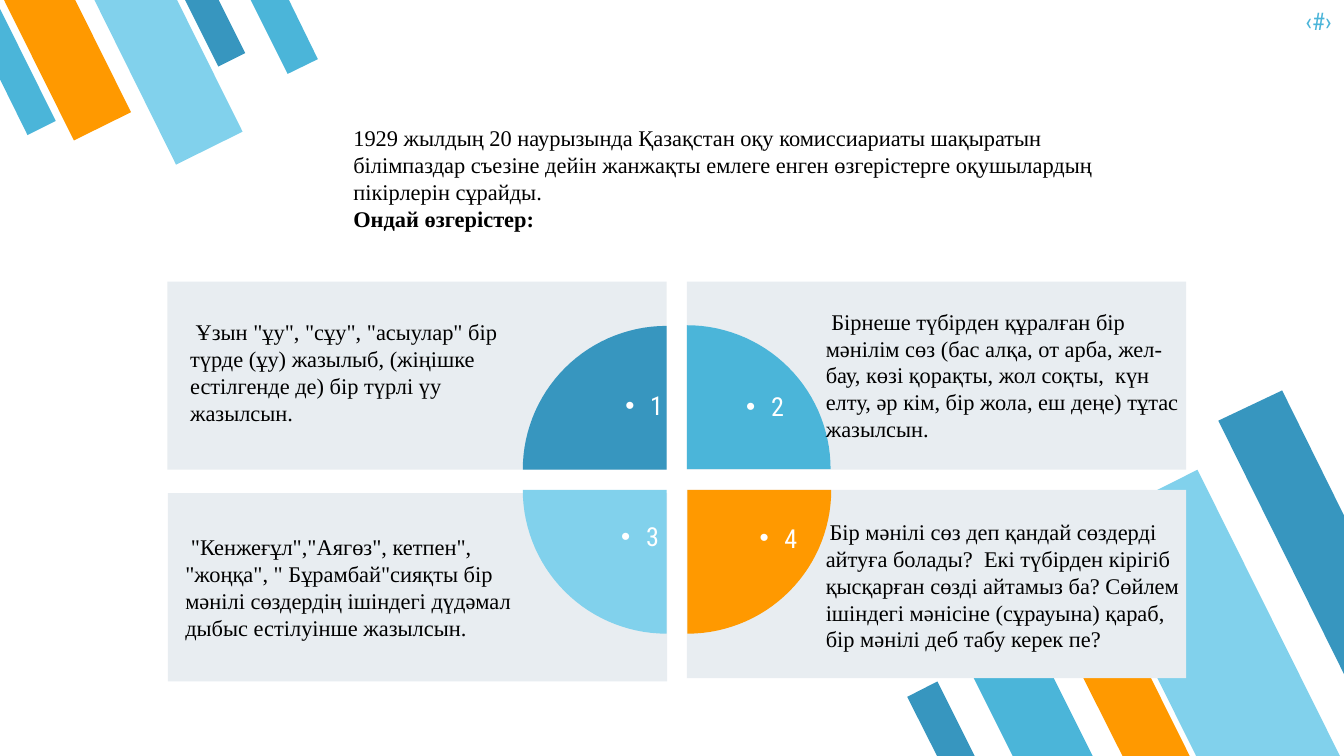
import math
from lxml import etree
from pptx import Presentation
from pptx import util as u
from pptx.dml.color import RGBColor
from pptx.enum import shapes, text

NAVY = RGBColor(0x37, 0x96, 0xBF)
BLUE = RGBColor(0x4B, 0xB5, 0xD9)
SKY = RGBColor(0x81, 0xD1, 0xEC)
ORANGE = RGBColor(0xFF, 0x99, 0x00)
PANEL = RGBColor(0xE8, 0xED, 0xF1)
WHITE = RGBColor(0xFF, 0xFF, 0xFF)
BLACK = RGBColor(0, 0, 0)
SERIF, CONDENSED = "Times New Roman", "Roboto Condensed"

presentation = Presentation()
presentation.slide_width = u.Inches(20)
presentation.slide_height = u.Inches(11.25)
slide = presentation.slides.add_slide(presentation.slide_layouts[6])


def add_outline(points, color):
    """Add a closed filled outline through points given in inches."""
    corners = [(u.Inches(x), u.Inches(y)) for x, y in points]
    builder = slide.shapes.build_freeform(*corners[0])
    builder.add_line_segments(corners[1:], close=True)
    shape = builder.convert_to_shape()
    shape.shadow.inherit = False
    shape.fill.solid()
    shape.fill.fore_color.rgb = color
    shape.line.fill.background()


def add_text(box, paragraphs, color=BLACK, align=text.PP_ALIGN.LEFT, inset=True):
    """Add a text box; each paragraph is a list of (words, font, size, bold)."""
    frame = slide.shapes.add_textbox(*[u.Inches(length) for length in box]).text_frame
    frame.word_wrap = True
    if not inset:
        frame.margin_left = frame.margin_right = 0
        frame.margin_top = frame.margin_bottom = 0
    for index, runs in enumerate(paragraphs):
        paragraph = frame.add_paragraph() if index else frame.paragraphs[0]
        paragraph.alignment = align
        for words, font, size, bold in runs:
            run = paragraph.add_run()
            run.text = words
            run.font.name = font
            run.font.size = u.Pt(size)
            run.font.bold = bold
            run.font.color.rgb = color
    return frame.paragraphs[0]


# Slanted stripes in the bottom right and top left corners
stripes = [
    (BLUE, [(15.07, 11.25), (16.26, 11.25), (15.08, 8.89), (14.13, 9.37)]),
    (SKY, [(17.81, 11.27), (19.95, 11.27), (17.82, 6.99), (16.11, 7.85)]),
    (ORANGE, [(16.71, 11.26), (17.71, 11.26), (16.72, 9.27), (15.91, 9.67)]),
    (NAVY, [(13.95, 11.26), (14.51, 11.26), (13.95, 10.14), (13.5, 10.37)]),
    (NAVY, [(19.08, 5.81), (18.13, 6.26), (20, 10.03), (20, 7.67)]),
    (NAVY, [(3.25, -0.01), (2.75, -0.01), (3.25, 0.99), (3.65, 0.79)]),
    (ORANGE, [(1.11, -0.02), (0.05, -0.02), (1.1, 2.09), (1.95, 1.67)]),
    (SKY, [(2.63, -0.01), (1.4, -0.01), (2.62, 2.45), (3.61, 1.96)]),
    (BLUE, [(4.29, -0.02), (3.72, -0.02), (4.28, 1.1), (4.73, 0.88)]),
    (BLUE, [(0.41, 2.01), (0.83, 1.8), (0, 0.13), (0, 1.18)]),
]
for color, points in stripes:
    add_outline(points, color)

# Slide number mark
mark = add_text((18.82, 0.09, 1, 0.67), [[("‹#›", CONDENSED, 26, False)]],
                BLUE, text.PP_ALIGN.RIGHT, inset=False)
mark.line_spacing = u.Pt(31.2)

# Grey panels
for left, top in [(2.49, 4.19), (10.22, 4.19), (2.5, 7.34), (10.22, 7.29)]:
    panel = slide.shapes.add_shape(
        shapes.MSO_SHAPE.RECTANGLE,
        u.Inches(left), u.Inches(top), u.Inches(7.43), u.Inches(2.8))
    panel.shadow.inherit = False
    panel.fill.solid()
    panel.fill.fore_color.rgb = PANEL
    panel.line.fill.background()

# Quarter circles: centre and start angle, clockwise from the right
RADIUS, STEPS = 2.14, 30
quarters = [
    (9.92, 6.99, 180, NAVY),
    (10.22, 6.98, 270, BLUE),
    (10.23, 7.29, 0, ORANGE),
    (9.92, 7.29, 90, SKY),
]
for center_x, center_y, start, color in quarters:
    points = [(center_x, center_y)]
    for step in range(STEPS + 1):
        angle = math.radians(start + 90 * step / STEPS)
        points.append((center_x + RADIUS * math.cos(angle),
                       center_y + RADIUS * math.sin(angle)))
    add_outline(points, color)

# Bulleted numbers on the quarters
number_boxes = [(9.03, 5.8, 0.29, 0.45), (10.83, 5.81, 0.5, 0.45),
                (8.97, 7.75, 0.33, 0.45), (11.03, 7.77, 0.26, 0.45)]
for number, box in enumerate(number_boxes, start=1):
    paragraph = add_text(box, [[(str(number), CONDENSED, 28, False)]],
                         WHITE, text.PP_ALIGN.CENTER, inset=False)
    paragraph.level = 1
    paragraph.line_spacing = u.Pt(33.6)
    properties = paragraph._p.get_or_add_pPr()
    properties.set("marL", str(u.Inches(0.74)))
    properties.set("indent", str(u.Inches(-0.37)))
    namespace = properties.nsmap["a"]
    font = etree.SubElement(properties, f"{{{namespace}}}buFont")
    font.set("typeface", "Arial")
    bullet = etree.SubElement(properties, f"{{{namespace}}}buChar")
    bullet.set("char", "•")

# Introduction
add_text((5.16, 1.8, 11.56, 2.02), [
    [("1929 жылдың 20 наурызында Қазақстан оқу комиссиариаты шақыратын "
      "білімпаздар съезіне дейін жанжақты емлеге енген өзгерістерге "
      "оқушылардың пікірлерін сұрайды.", SERIF, 24, False)],
    [("Ондай өзгерістер:", SERIF, 24, True)],
])

# Panel texts
panel_texts = [
    ((2.73, 4.69, 4.84, 1.72),
     [(' Ұзын "ұу", "сұу", "асыулар" бір түрде (ұу) жазылыб, (жіңішке '
       'естілгенде де) бір түрлі үу жазылсын.', SERIF, 24, False)]),
    ((12.19, 4.53, 5.55, 2.12),
     [(" Бірнеше түбірден құралған бір мəнілім сөз (бас алқа, от арба, "
       "жел-бау, көзі қорақты, жол соқты,  күн елту, əр кім, бір жола, "
       "еш деңе) тұтас жазылсын.", SERIF, 24, False)]),
    ((2.66, 7.89, 5.7, 1.72),
     [(' "Кенжеғұл","Аягөз", кетпен", "жоңқа", " Бұрамбай"сияқты бір '
       'мəнілі сөздердің ішіндегі дүдəмал дыбыс естілуінше жазылсын.',
       SERIF, 24, False)]),
    ((12.19, 7.66, 5.47, 2.12),
     [(" ", "Calibri", 18, False),
      ("Бір мəнілі сөз деп қандай сөздерді айтуға болады?  Екі түбірден "
       "кірігіб қысқарған сөзді айтамыз ба? Сөйлем ішіндегі мəнісіне "
       "(сұрауына) қараб, бір мəнілі деб табу керек пе?", SERIF, 24, False)]),
]
for box, runs in panel_texts:
    add_text(box, [runs])

presentation.save("out.pptx")
